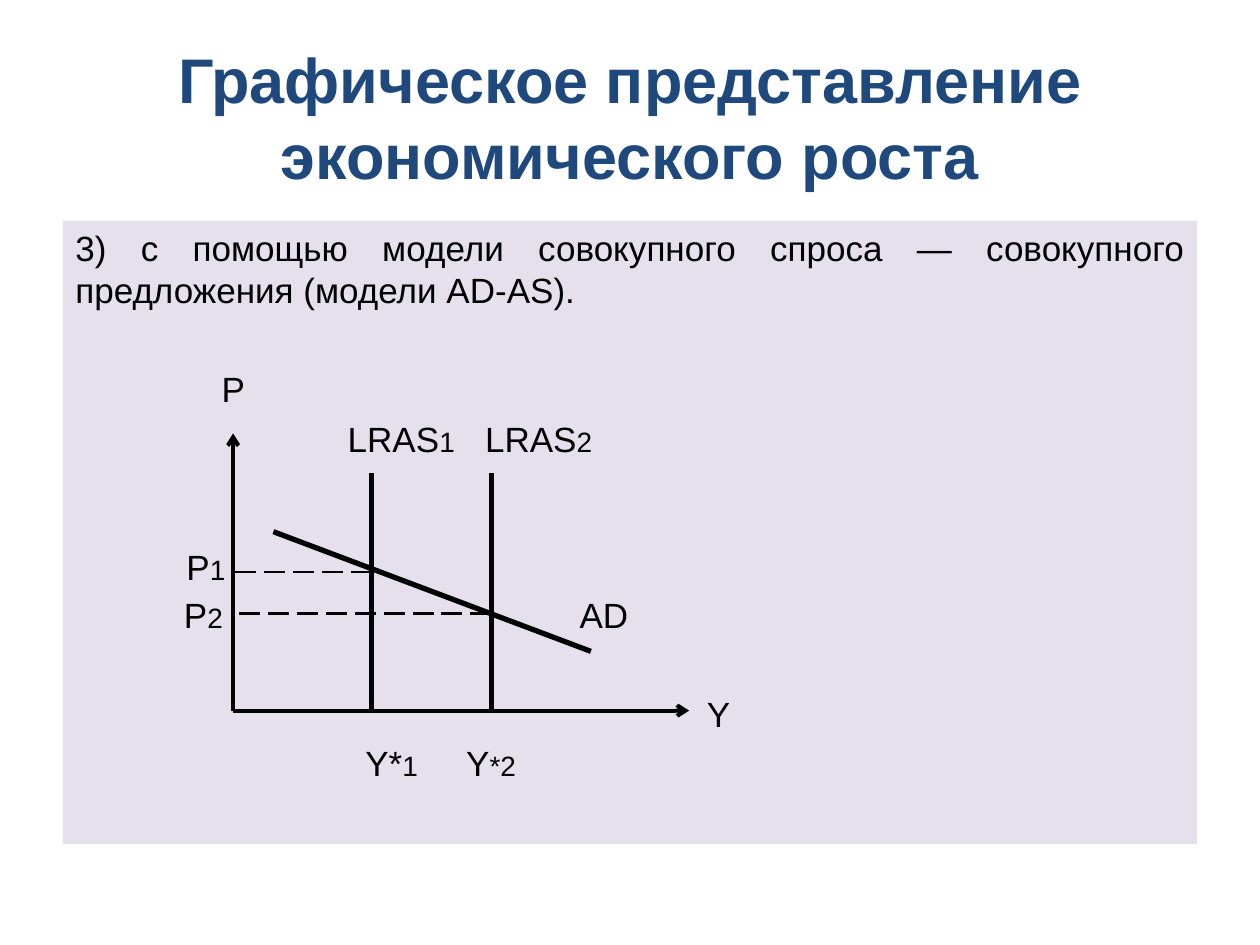
"""Build a slide showing economic growth in the AD-AS model."""
from pptx import Presentation
from pptx.dml.color import RGBColor
from pptx.enum.dml import MSO_LINE
from pptx.enum.shapes import MSO_CONNECTOR, MSO_SHAPE
from pptx.enum.text import MSO_ANCHOR, PP_ALIGN
from pptx.oxml.ns import qn
from pptx.util import Inches, Pt
from lxml.etree import SubElement

COLORS = {"title": "1F497D", "panel": "E6E0EC", "ink": "000000"}


def add_span(para, text, size, color="ink", bold=False):
    span = para.add_run()
    span.text = text
    span.font.color.rgb = RGBColor.from_string(COLORS[color])
    formats = {"name": "Arial", "size": Pt(size), "bold": bold}
    for name, value in formats.items():
        setattr(span.font, name, value)


deck = Presentation()
deck.slide_width, deck.slide_height = Inches(10), Inches(7.5)
page = deck.slides.add_slide(deck.slide_layouts[5])

title = page.shapes.title
title_place = {"left": 0.5, "top": 0.3, "width": 9, "height": 1.25}
for name, value in title_place.items():
    setattr(title, name, Inches(value))
title.text_frame.vertical_anchor = MSO_ANCHOR.MIDDLE
title_para = title.text_frame.paragraphs[0]
title_para.alignment = PP_ALIGN.CENTER
add_span(title_para, "Графическое представление экономического роста", 36, "title", True)

panel = page.shapes.add_shape(
    MSO_SHAPE.RECTANGLE, Inches(0.5), Inches(1.75), Inches(9), Inches(4.95))
panel.shadow.inherit = False
panel.fill.solid()
panel.fill.fore_color.rgb = RGBColor.from_string(COLORS["panel"])
panel.line.fill.background()
panel.text_frame.word_wrap = True
panel.text_frame.vertical_anchor = MSO_ANCHOR.TOP
panel_para = panel.text_frame.paragraphs[0]
panel_para.alignment = PP_ALIGN.JUSTIFY
add_span(panel_para, "3) с помощью модели совокупного спроса — совокупного "
         "предложения (модели AD-AS).", 20)

labels = [
    ("P", "", 1.76, 3.08),
    ("LRAS", "1", 2.76, 3.48),
    ("LRAS", "2", 3.85, 3.48),
    ("P", "1", 1.48, 4.5),
    ("P", "2", 1.46, 4.88),
    ("AD", "", 4.6, 4.88),
    ("Y", "", 5.61, 5.66),
    ("Y*", "1", 2.9, 6.05),
    ("Y", "*2", 3.7, 6.05),
]
for text, index, left, middle in labels:
    box = page.shapes.add_textbox(
        Inches(left), Inches(middle - 0.2), Inches(1), Inches(0.4))
    frame = box.text_frame
    frame_format = {"margin_left": 0, "margin_right": 0, "margin_top": 0,
                    "margin_bottom": 0, "word_wrap": True,
                    "vertical_anchor": MSO_ANCHOR.MIDDLE}
    for name, value in frame_format.items():
        setattr(frame, name, value)
    add_span(frame.paragraphs[0], text, 20)
    if index:
        add_span(frame.paragraphs[0], index, 16)

origin_x, origin_y = 1.85, 5.64
supply_1, supply_2, supply_top = 2.95, 3.9, 3.75
price_1, price_2 = 4.54, 4.87
styles = {"axis": 2.25, "curve": 3, "guide": 1.5}
lines = [
    ("axis", origin_x, origin_y, origin_x, 3.44),
    ("axis", origin_x, origin_y, 5.47, origin_y),
    ("curve", supply_1, supply_top, supply_1, origin_y),
    ("curve", supply_2, supply_top, supply_2, origin_y),
    ("curve", 2.17, 4.22, 4.69, 5.17),
    ("guide", supply_1, price_1, origin_x, price_1),
    ("guide", supply_2, price_2, origin_x, price_2),
]
for style, *ends in lines:
    connector = page.shapes.add_connector(
        MSO_CONNECTOR.STRAIGHT, *[Inches(end) for end in ends])
    connector.line.width = Pt(styles[style])
    connector.line.color.rgb = RGBColor.from_string(COLORS["ink"])
    if style == "guide":
        connector.line.dash_style = MSO_LINE.LONG_DASH
    properties = connector.line._get_or_add_ln()
    if style == "axis":
        SubElement(properties, qn("a:tailEnd"), type="arrow")
    SubElement(properties.getparent(), qn("a:effectLst"))

deck.save("out.pptx")
